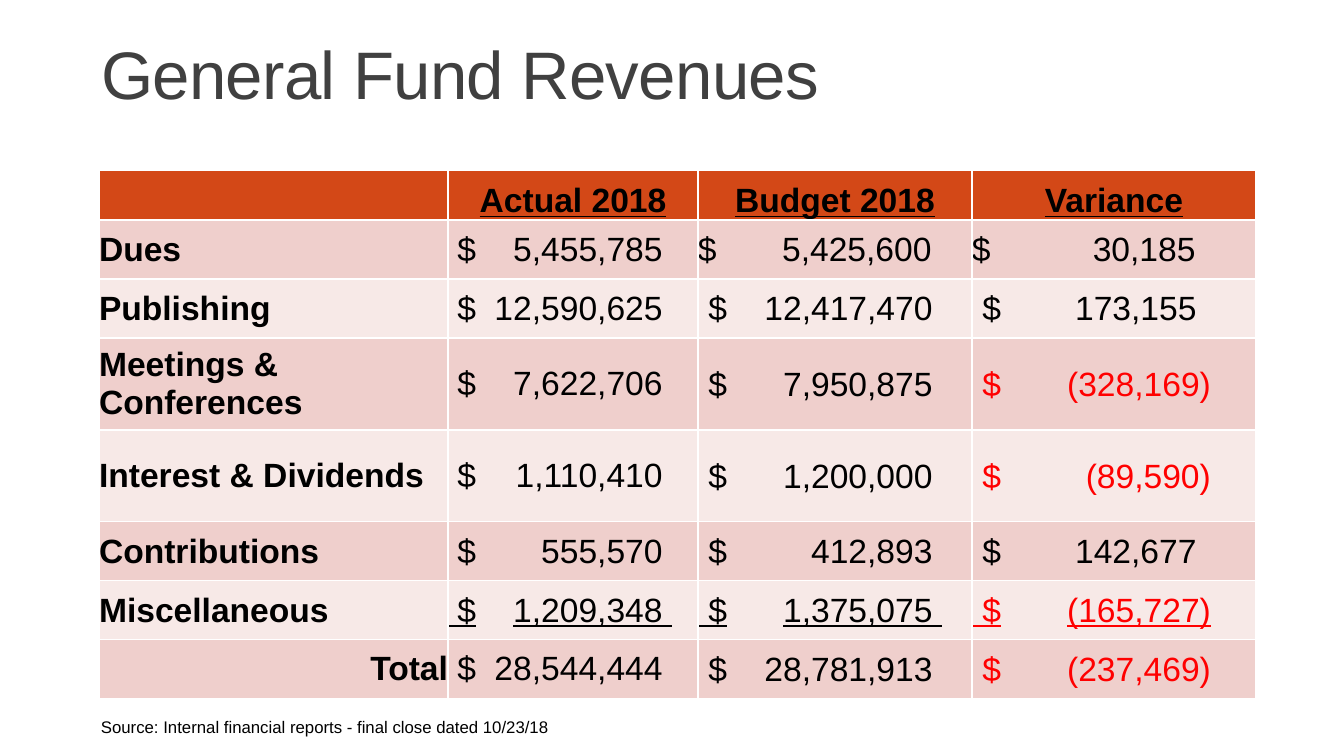
import pptx
import pptx.dml.color
import pptx.enum.text
import pptx.oxml
import pptx.oxml.ns
import pptx.util

RGBColor = pptx.dml.color.RGBColor
ALIGN = pptx.enum.text.PP_ALIGN
ANCHOR = pptx.enum.text.MSO_ANCHOR

BLACK = RGBColor(0x00, 0x00, 0x00)
GREY = RGBColor(0x40, 0x40, 0x40)
RED = RGBColor(0xFF, 0x00, 0x00)
WHITE = RGBColor(0xFF, 0xFF, 0xFF)
ORANGE = RGBColor(0xD3, 0x48, 0x17)
BAND_DARK = RGBColor(0xEF, 0xCF, 0xCC)
BAND_LIGHT = RGBColor(0xF7, 0xE9, 0xE7)

HEADERS = ["", "Actual 2018", "Budget 2018", "Variance"]
REVENUES = [
    ("Dues", "5,455,785", "5,425,600", "30,185"),
    ("Publishing", "12,590,625", "12,417,470", "173,155"),
    ("Meetings & Conferences", "7,622,706", "7,950,875", "(328,169)"),
    ("Interest & Dividends", "1,110,410", "1,200,000", "(89,590)"),
    ("Contributions", "555,570", "412,893", "142,677"),
    ("Miscellaneous", "1,209,348", "1,375,075", "(165,727)"),
    ("Total", "28,544,444", "28,781,913", "(237,469)"),
]
COL_WIDTHS = [349, 250, 274, 284]
ROW_HEIGHTS = [50, 59, 59, 92, 92, 59, 59, 59]
AMOUNT_ENDS = [224, 243, 233]
NEGATIVE_END = 238


def px(n):
    return pptx.util.Emu(round(n * 914400 / 100.8))


class Deck:
    font = "Arial"

    def __init__(self, prs):
        self.s = prs.slides.add_slide(prs.slide_layouts[5])

    def run(self, p, text, size, color=BLACK, bold=False, underline=False):
        r = p.add_run()
        r.text = text
        r.font.name = self.font
        r.font.size = pptx.util.Pt(size)
        r.font.color.rgb = color
        r.font.bold = bold
        r.font.underline = underline
        return r

    def title(self, text, x, y, w, h):
        sp = self.s.shapes.title
        sp.left, sp.top, sp.width, sp.height = px(x), px(y), px(w), px(h)
        tf = sp.text_frame
        tf.auto_size = pptx.enum.text.MSO_AUTO_SIZE.NONE
        tf.vertical_anchor = ANCHOR.BOTTOM
        p = tf.paragraphs[0]
        p.alignment = ALIGN.LEFT
        p.line_spacing = 0.85
        r = self.run(p, text, 48, GREY)
        r.font._element.set("spc", "-50")

    def note(self, text, x, y, w, h):
        sp = self.s.shapes.add_textbox(px(x), px(y), px(w), px(h))
        sp.text_frame.word_wrap = True
        self.run(sp.text_frame.paragraphs[0], text, 12)

    def table(self, x, y, col_widths, row_heights):
        frame = self.s.shapes.add_table(
            len(row_heights), len(col_widths), px(x), px(y),
            px(sum(col_widths)), px(sum(row_heights)))
        table = frame.table
        for col, width in zip(table.columns, col_widths):
            col.width = px(width)
        for row, height in zip(table.rows, row_heights):
            row.height = px(height)
        return table

    def cell(self, cell, fill, anchor, inset=0, top=1, bottom=1):
        """Style a cell; top and bottom are border widths in points."""
        cell.margin_left = cell.margin_top = cell.margin_right = px(inset)
        cell.margin_bottom = 0
        cell.vertical_anchor = anchor
        tcPr = cell._tc.get_or_add_tcPr()
        for side, width in (("L", 1), ("R", 1), ("T", top), ("B", bottom)):
            tcPr.append(pptx.oxml.parse_xml(
                f'<a:ln{side} {pptx.oxml.ns.nsdecls("a")} w="{pptx.util.Pt(width)}">'
                f'<a:solidFill><a:srgbClr val="{WHITE}"/></a:solidFill></a:ln{side}>'))
        cell.fill.solid()
        cell.fill.fore_color.rgb = fill
        return cell.text_frame.paragraphs[0]

    def amount(self, p, value, end, lead, underline):
        """Dollar sign at the left, figure right-aligned on a tab stop."""
        negative = value.startswith("(")
        stop = NEGATIVE_END if negative else end
        p._p.get_or_add_pPr().append(pptx.oxml.parse_xml(
            f'<a:tabLst {pptx.oxml.ns.nsdecls("a")}>'
            f'<a:tab pos="{px(stop)}" algn="r"/></a:tabLst>'))
        tail = "" if negative else " "
        self.run(p, f"{lead}$\t{value}{tail}", 24,
                 RED if negative else BLACK, underline=underline)


def fill_revenues(deck, table):
    for c, header in enumerate(HEADERS):
        p = deck.cell(table.cell(0, c), ORANGE, ANCHOR.BOTTOM, bottom=1.5)
        p.alignment = ALIGN.CENTER
        if header:
            deck.run(p, header, 24, bold=True, underline=True)
    for i, (label, *amounts) in enumerate(REVENUES, start=1):
        band = BAND_DARK if i % 2 else BAND_LIGHT
        top = 1.5 if i == 1 else 1
        p = deck.cell(table.cell(i, 0), band, ANCHOR.MIDDLE, top=top)
        p.alignment = ALIGN.RIGHT if label == "Total" else ALIGN.LEFT
        deck.run(p, label, 24, bold=True)
        for c, (value, end) in enumerate(zip(amounts, AMOUNT_ENDS), start=1):
            inset = 1 if i > 1 and c > 1 else 0
            lead = "" if i == 1 and c > 1 else " "
            p = deck.cell(table.cell(i, c), band, ANCHOR.MIDDLE, inset, top)
            deck.amount(p, value, end, lead, label == "Miscellaneous")


def main():
    prs = pptx.Presentation()
    prs.slide_width, prs.slide_height = px(1344), px(756)
    deck = Deck(prs)
    deck.title("General Fund Revenues", 91, 33, 1165, 85)
    fill_revenues(deck, deck.table(99, 170, COL_WIDTHS, ROW_HEIGHTS))
    deck.note("Source: Internal financial reports - final close dated 10/23/18",
              91, 712, 549, 30)
    prs.save("out.pptx")


if __name__ == "__main__":
    main()
